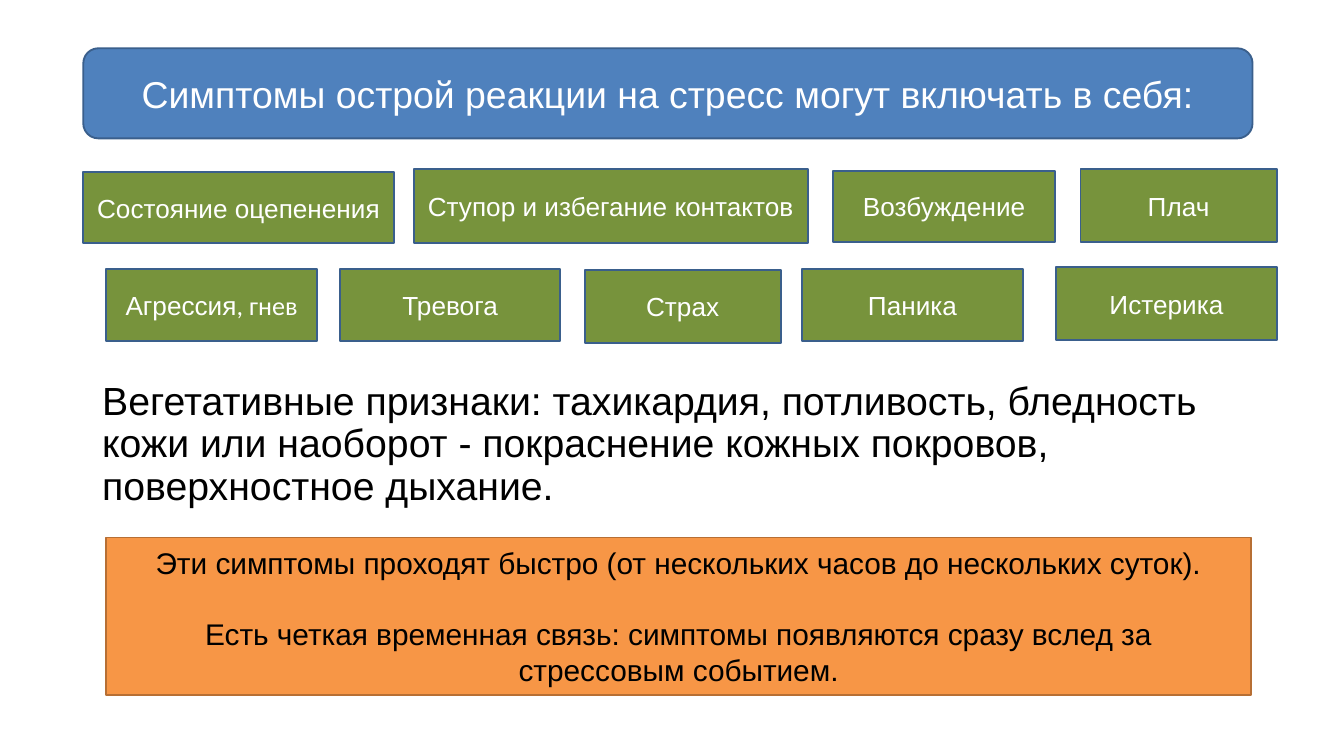
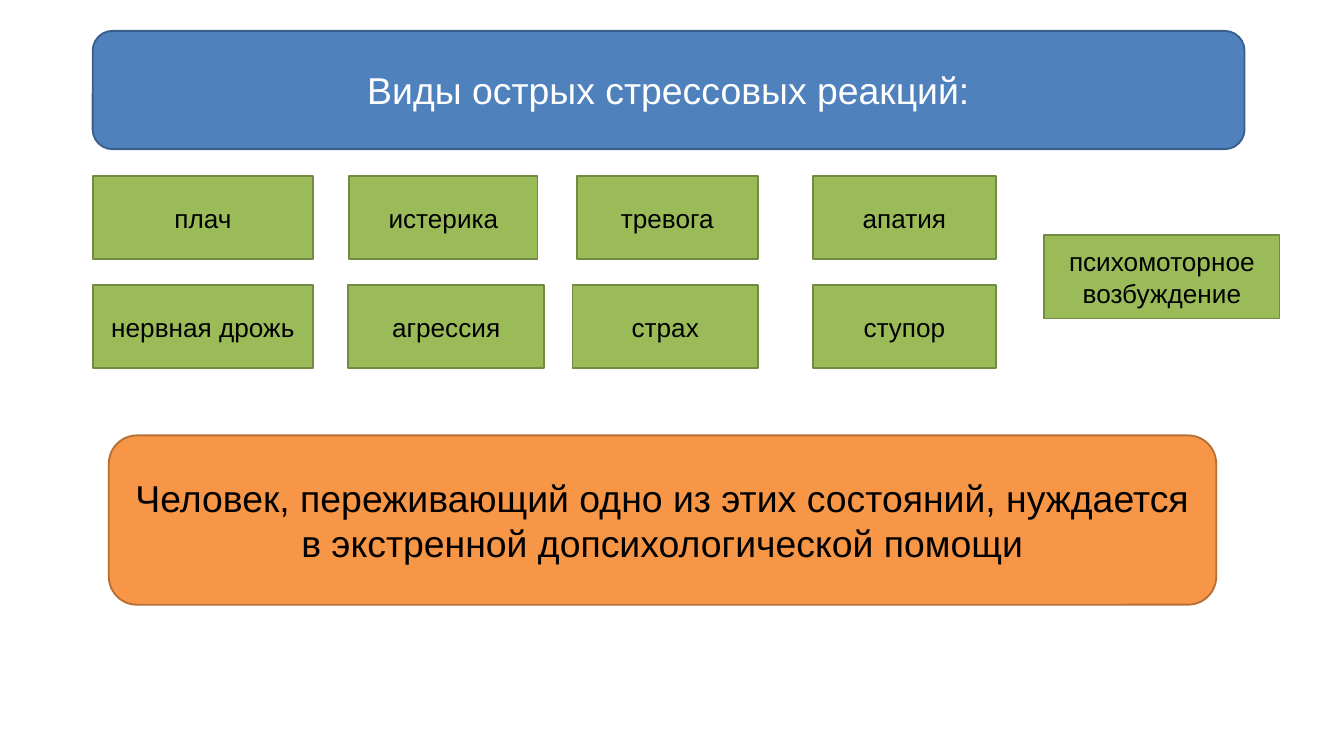
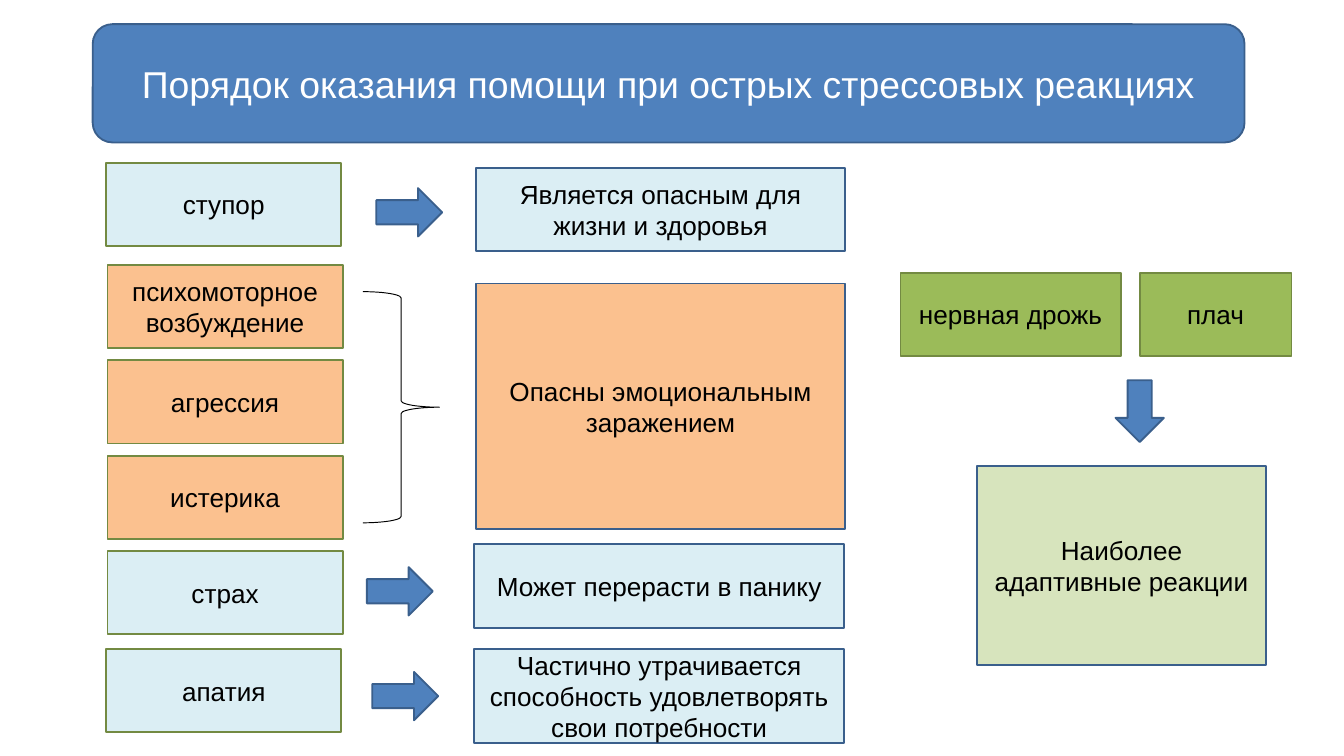
import dataclasses

import pptx
import pptx.dml.color
import pptx.enum.shapes
import pptx.enum.text
import pptx.util

Inches = pptx.util.Inches
Shape = pptx.enum.shapes.MSO_SHAPE


@dataclasses.dataclass(frozen=True)
class Theme:
    blue: str = "4F81BD"
    blue_line: str = "3A5F8C"
    dark_green: str = "77933C"
    green: str = "9BBB59"
    green_line: str = "738A42"
    pale_green: str = "D7E4BD"
    orange: str = "F79646"
    orange_line: str = "B76F34"
    peach: str = "FBC18F"
    pale_blue: str = "DBEEF4"
    white: str = "FFFFFF"
    black: str = "000000"
    font: str = "Arial"
    second_font: str = "Calibri"
    body_size: float = 21
    title_size: float = 20
    note_size: float = 16
    label_size: float = 14


theme = Theme()


def style_text(text_frame, size, color, alignment):
    text_frame.word_wrap = True
    for paragraph in text_frame.paragraphs:
        paragraph.alignment = alignment
        for run in paragraph.runs:
            run.font.name = theme.font
            run.font.size = pptx.util.Pt(size)
            run.font.color.rgb = pptx.dml.color.RGBColor.from_string(color)


def add_box(slide, frame, fill, line, text="", size=theme.label_size,
            color=theme.black, kind=Shape.RECTANGLE):
    shape = slide.shapes.add_shape(kind, *[Inches(length) for length in frame])
    shape.shadow.inherit = False
    shape.fill.solid()
    shape.fill.fore_color.rgb = pptx.dml.color.RGBColor.from_string(fill)
    shape.line.color.rgb = pptx.dml.color.RGBColor.from_string(line)
    shape.line.width = pptx.util.Pt(1)
    shape.text_frame.text = text
    shape.text_frame.vertical_anchor = pptx.enum.text.MSO_ANCHOR.MIDDLE
    style_text(shape.text_frame, size, color, pptx.enum.text.PP_ALIGN.CENTER)
    return shape


# Widescreen 16:9 page
presentation = pptx.Presentation()
presentation.slide_width = Inches(10)
presentation.slide_height = Inches(10 * 9 / 16)

# Slides with their title bands
titles = [
    ("Симптомы острой реакции на стресс могут включать в себя:", (0.62, 0.36, 8.7, 0.67)),
    ("Виды острых стрессовых реакций:", (0.69, 0.23, 8.57, 0.88)),
    ("Порядок оказания помощи при острых стрессовых реакциях", (0.69, 0.18, 8.57, 0.88)),
]
slides = []
for title, frame in titles:
    slide = presentation.slides.add_slide(presentation.slide_layouts[6])
    add_box(slide, frame, theme.blue, theme.blue_line, title, theme.title_size,
            theme.white, Shape.ROUNDED_RECTANGLE)
    slides.append(slide)
symptoms_slide, reactions_slide, order_slide = slides

# Symptoms: two rows of labels
symptoms = [
    ("Состояние оцепенения", (0.62, 1.28, 2.31, 0.53)),
    ("Ступор и избегание контактов", (3.08, 1.26, 2.93, 0.55)),
    ("Возбуждение", (6.2, 1.27, 1.65, 0.53)),
    ("Плач", (8.04, 1.26, 1.46, 0.54)),
    ("Агрессия", (0.79, 2, 1.57, 0.54)),
    ("Тревога", (2.53, 2, 1.64, 0.54)),
    ("Страх", (4.35, 2.01, 1.46, 0.54)),
    ("Паника", (5.97, 2, 1.64, 0.54)),
    ("Истерика", (7.86, 1.99, 1.64, 0.54)),
]
for symptom, frame in symptoms:
    label = add_box(symptoms_slide, frame, theme.dark_green, theme.blue_line,
                    symptom, color=theme.white)
    if symptom == "Агрессия":
        label.text_frame.paragraphs[0].add_run().text = ", гнев"
        style_text(label.text_frame, theme.label_size, theme.white,
                   pptx.enum.text.PP_ALIGN.CENTER)
        label.text_frame.paragraphs[0].runs[1].font.name = theme.second_font

# Symptoms: body text
body = symptoms_slide.shapes.add_textbox(
    Inches(0.69), Inches(2.8), Inches(8.62), Inches(1.06)).text_frame
body.text = ("Вегетативные признаки: тахикардия, потливость, бледность кожи или наоборот - "
             "покраснение кожных покровов, поверхностное дыхание.")
body.margin_left = body.margin_right = Inches(0.07)
body.margin_top = body.margin_bottom = Inches(0.04)
body.paragraphs[0].line_spacing = 0.9
body.paragraphs[0].space_before = pptx.util.Pt(7.5)
style_text(body, theme.body_size, theme.black, pptx.enum.text.PP_ALIGN.LEFT)

# Symptoms: duration note
note = add_box(
    symptoms_slide, (0.79, 4, 8.52, 1.17), theme.orange, theme.orange_line,
    "Эти симптомы проходят быстро (от нескольких часов до нескольких суток).\n"
    "Есть четкая временная связь: симптомы появляются сразу вслед за стрессовым событием.",
    theme.note_size)
note.text_frame.paragraphs[1].space_before = pptx.util.Pt(18.5)

# Reactions: two rows of labels and one between them
reaction_rows = [
    (1.31, [("плач", 0.69, 1.64), ("истерика", 2.6, 1.4),
            ("тревога", 4.29, 1.35), ("апатия", 6.05, 1.36)]),
    (2.12, [("нервная дрожь", 0.69, 1.64), ("агрессия", 2.59, 1.46),
            ("страх", 4.26, 1.38), ("ступор", 6.05, 1.36)]),
    (1.75, [("психомоторное возбуждение", 7.77, 1.75)]),
]
label_height = 0.62
for top, reactions in reaction_rows:
    for reaction, left, width in reactions:
        add_box(reactions_slide, (left, top, width, label_height),
                theme.green, theme.green_line, reaction)

add_box(reactions_slide, (0.81, 3.24, 8.24, 1.26), theme.orange, theme.orange_line,
        "Человек, переживающий одно из этих состояний, нуждается "
        "в экстренной допсихологической помощи",
        theme.title_size, kind=Shape.ROUNDED_RECTANGLE)

# Order of help: states on the left
states = [
    ("ступор", 0.79, 1.21, theme.pale_blue),
    ("психомоторное возбуждение", 0.8, 1.97, theme.peach),
    ("агрессия", 0.8, 2.68, theme.peach),
    ("истерика", 0.8, 3.39, theme.peach),
    ("страх", 0.8, 4.1, theme.pale_blue),
    ("апатия", 0.79, 4.83, theme.pale_blue),
]
for state, left, top, fill in states:
    add_box(order_slide, (left, top, 1.75, label_height), fill, theme.green_line, state)

# Order of help: mild reactions on the right
for reaction, left, width in [("нервная дрожь", 6.7, 1.64), ("плач", 8.48, 1.13)]:
    add_box(order_slide, (left, 2.03, width, label_height),
            theme.green, theme.green_line, reaction)

# Order of help: consequences
consequences = [
    ("Является опасным для жизни и здоровья", (3.54, 1.25, 2.75, 0.62), theme.pale_blue),
    ("Опасны эмоциональным заражением", (3.54, 2.11, 2.75, 1.83), theme.peach),
    ("Может перерасти в панику", (3.53, 4.05, 2.75, 0.62), theme.pale_blue),
    ("Частично утрачивается способность удовлетворять свои потребности",
     (3.53, 4.83, 2.75, 0.7), theme.pale_blue),
    ("Наиболее адаптивные реакции", (7.27, 3.47, 2.15, 1.48), theme.pale_green),
]
for consequence, frame, fill in consequences:
    add_box(order_slide, frame, fill, theme.blue_line, consequence)

# Order of help: arrows and brace
arrows = [(2.8, 1.4, 0.49, 0), (2.73, 4.22, 0.49, 0), (2.77, 5, 0.49, 0), (8.25, 2.88, 0.46, 90)]
for left, top, width, rotation in arrows:
    arrow = add_box(order_slide, (left, top, width, 0.36), theme.blue, theme.blue_line,
                    kind=Shape.RIGHT_ARROW)
    arrow.rotation = rotation

brace = add_box(order_slide, (2.7, 2.17, 0.57, 1.72), theme.white, theme.black,
                kind=Shape.RIGHT_BRACE)
brace.fill.background()
brace.line.width = pptx.util.Pt(0.5)

presentation.save("out.pptx")
